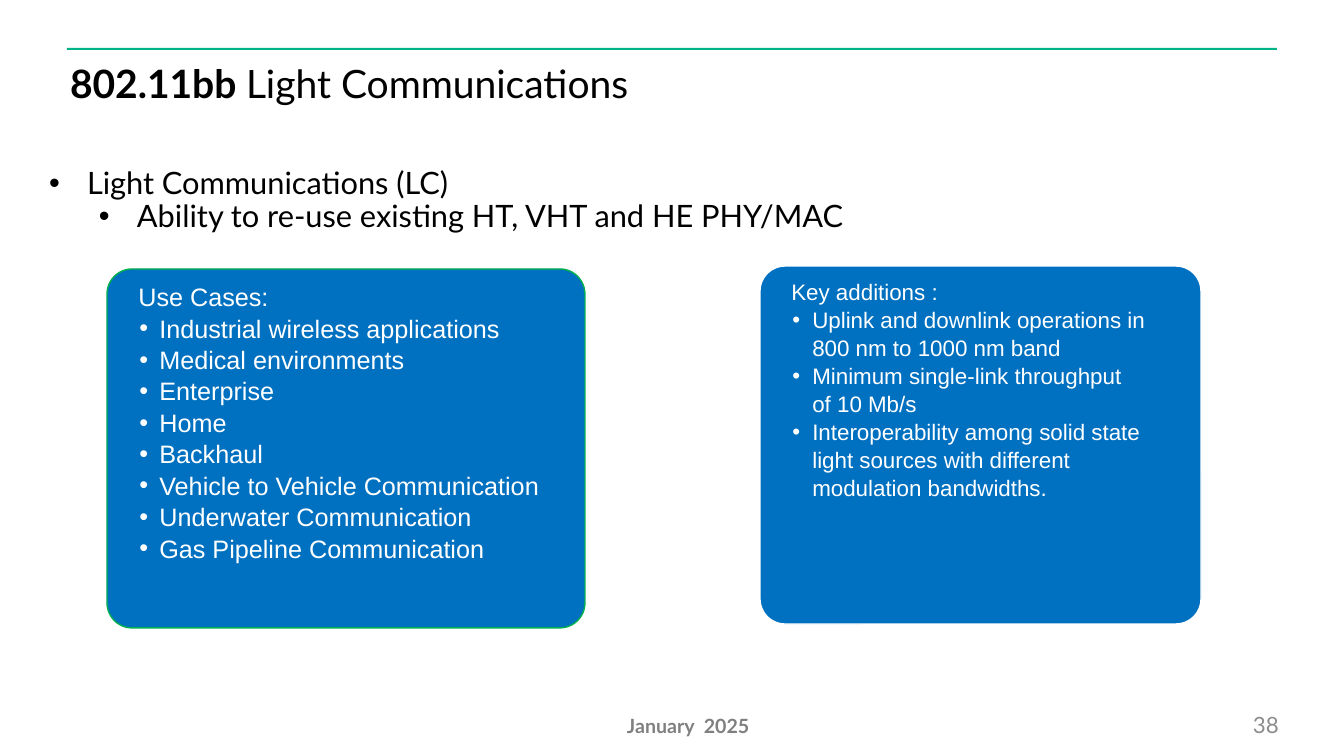
from lxml.etree import SubElement
from pptx import Presentation
from pptx.dml.color import RGBColor
from pptx.enum.shapes import MSO_SHAPE
from pptx.enum.text import MSO_ANCHOR, PP_ALIGN
from pptx.oxml.ns import qn
from pptx.util import Emu, Pt

BLACK = RGBColor(0x00, 0x00, 0x00)
WHITE = RGBColor(0xFF, 0xFF, 0xFF)
TEAL = RGBColor(0x00, 0xB3, 0x88)
BLUE = RGBColor(0x00, 0x70, 0xC0)
GREEN = RGBColor(0x00, 0xB0, 0x50)
DATE_GREY = RGBColor(0x80, 0x80, 0x80)
NUMBER_GREY = RGBColor(0x8C, 0x8C, 0x8C)

TITLE = [("802.11bb ", True), ("Light Communications", False)]
POINTS = ["Light Communications (LC)", "Ability to re-use existing HT, VHT and HE PHY/MAC"]
CARDS = [
    {
        "at": (107, 269, 478, 359), "outline": GREEN, "size": 18, "heading": "Use Cases:",
        "items": [
            "Industrial wireless applications",
            "Medical environments",
            "Enterprise",
            "Home",
            "Backhaul",
            "Vehicle to Vehicle Communication",
            "Underwater Communication",
            "Gas Pipeline Communication",
        ],
    },
    {
        "at": (760, 266, 441, 358), "outline": WHITE, "size": 16, "heading": "Key additions :",
        "items": [
            "Uplink and downlink operations in\n800 nm to 1000 nm band",
            "Minimum single-link throughput\nof 10 Mb/s",
            "Interoperability among solid state\nlight sources with different\nmodulation bandwidths.",
        ],
    },
]
FOOTERS = [
    ("January  2025", (617, 709, 143, 22), 14, DATE_GREY, True),
    ("38", (1243, 706, 58, 25), 16, NUMBER_GREY, False),
]


def px(length):
    return Emu(round(length * 914400 / 100.8))


def place(shape, at):
    shape.left, shape.top, shape.width, shape.height = map(px, at)


def set_frame(frame, insets, wrap=True):
    frame.word_wrap = wrap
    frame.vertical_anchor = MSO_ANCHOR.TOP
    horizontal, vertical = map(px, insets)
    frame.margin_left = frame.margin_right = horizontal
    frame.margin_top = frame.margin_bottom = vertical


def add_span(para, text, font, size, color, bold=False):
    for index, line in enumerate(text.split("\n")):
        if index:
            para.add_line_break()
        span = para.add_run()
        span.text = line
        span.font.name = font
        span.font.size = Pt(size)
        span.font.bold = bold
        span.font.color.rgb = color


def format_para(para, spacing, left=0, hanging=0, bullet_color=None):
    para.alignment = PP_ALIGN.LEFT
    para.line_spacing = spacing
    para.space_before = para.space_after = Pt(0)
    properties = para._p.get_or_add_pPr()
    properties.set("marL", str(px(left)))
    properties.set("indent", str(px(-hanging)))
    if bullet_color is not None:
        color = SubElement(properties, qn("a:buClr"))
        SubElement(color, qn("a:srgbClr"), val=str(bullet_color))
        SubElement(properties, qn("a:buFont"), typeface="Arial")
        SubElement(properties, qn("a:buChar"), char="•")


def next_para(frame, index):
    return frame.add_paragraph() if index else frame.paragraphs[0]


def add_panel(page, kind, at, fill):
    panel = page.shapes.add_shape(kind, *map(px, at))
    panel.shadow.inherit = False
    panel.fill.solid()
    panel.fill.fore_color.rgb = fill
    return panel


def add_card(page, card):
    box = add_panel(page, MSO_SHAPE.ROUNDED_RECTANGLE, card["at"], BLUE)
    box.adjustments[0] = 0.07
    box.line.color.rgb = card["outline"]
    box.line.width = Pt(1)
    frame = box.text_frame
    set_frame(frame, (6, 4))
    for index, text in enumerate([card["heading"], *card["items"]]):
        para = next_para(frame, index)
        if index:
            para.level = 1
            format_para(para, 1.04, 39, 20, WHITE)
        else:
            format_para(para, 1.04, 45, 27)
        add_span(para, text, "Arial", card["size"], WHITE)


def main():
    deck = Presentation()
    deck.slide_width, deck.slide_height = px(1344), px(756)
    page = deck.slides.add_slide(deck.slide_layouts[1])

    rule = add_panel(page, MSO_SHAPE.RECTANGLE, (67, 48, 1210, 2), TEAL)
    rule.line.fill.background()

    for card in CARDS:
        add_card(page, card)

    title = page.shapes.title
    place(title, (70, 65, 1193, 120))
    set_frame(title.text_frame, (0, 0))
    heading = title.text_frame.paragraphs[0]
    format_para(heading, 0.9)
    for text, bold in TITLE:
        add_span(heading, text, "Lato", 27.9, BLACK, bold)

    body = page.placeholders[1]
    place(body, (49, 168, 866, 101))
    set_frame(body.text_frame, (0, 0))
    for level, text in enumerate(POINTS):
        para = next_para(body.text_frame, level)
        para.level = level
        format_para(para, 0.9, 38 + 50 * level, 38, BLACK)
        add_span(para, text, "Lato", 22, BLACK)

    for text, at, size, color, bold in FOOTERS:
        box = page.shapes.add_textbox(*map(px, at))
        set_frame(box.text_frame, (10, 5), wrap=False)
        add_span(box.text_frame.paragraphs[0], text, "Lato", size, color, bold)

    deck.save("out.pptx")


if __name__ == "__main__":
    main()
